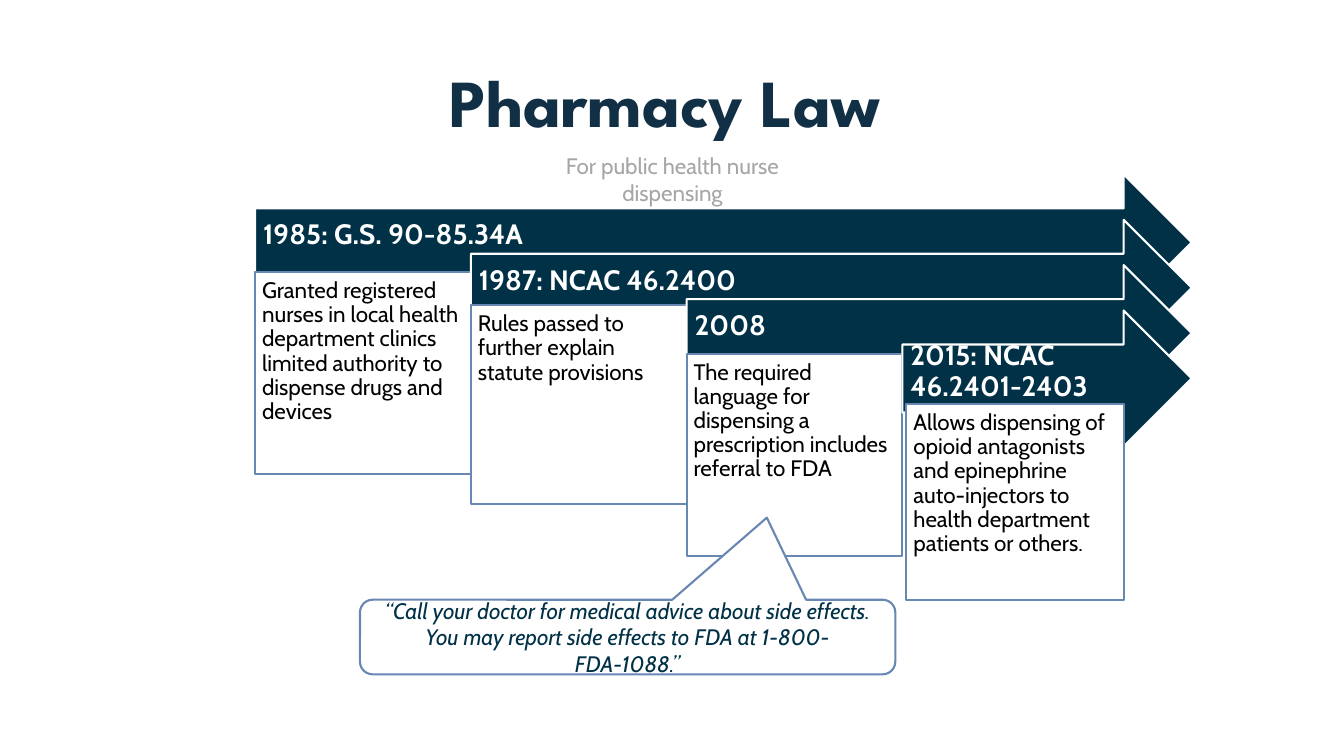
from dataclasses import dataclass

from pptx import Presentation
from pptx.dml.color import RGBColor
from pptx.enum.shapes import MSO_SHAPE
from pptx.enum.text import MSO_ANCHOR, PP_ALIGN
from pptx.shapes.autoshape import Shape
from pptx.slide import Slide
from pptx.util import Inches, Pt


@dataclass(frozen=True)
class Theme:
    navy: RGBColor = RGBColor(0x00, 0x31, 0x47)
    title: RGBColor = RGBColor(0x11, 0x30, 0x45)
    gray: RGBColor = RGBColor(0xA6, 0xA6, 0xA6)
    border: RGBColor = RGBColor(0x68, 0x87, 0xB3)
    white: RGBColor = RGBColor(0xFF, 0xFF, 0xFF)
    black: RGBColor = RGBColor(0x00, 0x00, 0x00)
    title_font: str = "League Spartan"
    body_font: str = "Cabin"
    title_size: int = 48
    law_size: int = 20
    body_size: int = 16
    line_width: float = 1.5


@dataclass(frozen=True)
class Box:
    left: float
    top: float
    width: float
    height: float


@dataclass(frozen=True)
class Law:
    name: str
    summary: str
    detail: Box


THEME = Theme()
FIRST_LEFT, FIRST_TOP = 2.53, 1.73
STEP_X, STEP_Y = 2.14, 0.45
ARROW_RIGHT, ARROW_HEIGHT = 11.82, 1.35

LAWS = [
    Law("1985: G.S. 90-85.34A",
        "Granted registered nurses in local health department clinics limited "
        "authority to dispense drugs and devices",
        Box(2.53, 2.7, 2.14, 2)),
    Law("1987: NCAC 46.2400",
        "Rules passed to further explain statute provisions",
        Box(4.67, 3.03, 2.14, 1.97)),
    Law("2008",
        "The required language for dispensing a prescription includes referral to FDA",
        Box(6.81, 3.51, 2.14, 2.01)),
    Law("2015: NCAC 46.2401-2403",
        "Allows dispensing of opioid antagonists and epinephrine auto-injectors "
        "to health department patients or others.",
        Box(8.99, 4.01, 2.16, 1.94)),
]


def write(sp: Shape, text: str, size: int, color: RGBColor,
          font: str = THEME.body_font, align: PP_ALIGN = PP_ALIGN.CENTER,
          anchor: MSO_ANCHOR = MSO_ANCHOR.TOP, bold: bool = False,
          italic: bool = False, spacing: float = 1.0,
          margins: tuple[float, float, float, float] = (0.1, 0.05, 0.1, 0.05)) -> None:
    """Fill the shape with one paragraph; margins run left, top, right, bottom."""
    tf = sp.text_frame
    tf.word_wrap = True
    tf.vertical_anchor = anchor
    tf.margin_left, tf.margin_top, tf.margin_right, tf.margin_bottom = map(Inches, margins)
    p = tf.paragraphs[0]
    p.text = text
    p.alignment = align
    p.line_spacing = spacing
    p.font.name = font
    p.font.size = Pt(size)
    p.font.bold = bold
    p.font.italic = italic
    p.font.color.rgb = color


def add_box(s: Slide, kind: MSO_SHAPE, box: Box, fill: RGBColor, line: RGBColor) -> Shape:
    sp = s.shapes.add_shape(kind, Inches(box.left), Inches(box.top),
                            Inches(box.width), Inches(box.height))
    sp.shadow.inherit = False
    sp.fill.solid()
    sp.fill.fore_color.rgb = fill
    sp.line.color.rgb = line
    sp.line.width = Pt(THEME.line_width)
    return sp


def add_heading(s: Slide, box: Box, text: str, size: int, color: RGBColor,
                font: str, bold: bool) -> None:
    sp = s.shapes.add_textbox(Inches(box.left), Inches(box.top),
                              Inches(box.width), Inches(box.height))
    write(sp, text, size, color, font=font, bold=bold)


def add_law(s: Slide, index: int, law: Law) -> None:
    left = FIRST_LEFT + index * STEP_X
    top = FIRST_TOP + index * STEP_Y
    arrow = add_box(s, MSO_SHAPE.RIGHT_ARROW,
                    Box(left, top, ARROW_RIGHT - left, ARROW_HEIGHT),
                    THEME.navy, THEME.white)
    write(arrow, law.name, THEME.law_size, THEME.white, align=PP_ALIGN.LEFT,
          anchor=MSO_ANCHOR.MIDDLE, bold=True, spacing=0.9,
          margins=(0.08, 0.08, 0.28, 0.21))
    detail = add_box(s, MSO_SHAPE.RECTANGLE, law.detail, THEME.white, THEME.border)
    write(detail, law.summary, THEME.body_size, THEME.black, align=PP_ALIGN.LEFT,
          spacing=0.9, margins=(0.07, 0.07, 0.07, 0.07))


def add_callout(s: Slide) -> None:
    sp = add_box(s, MSO_SHAPE.ROUNDED_RECTANGULAR_CALLOUT,
                 Box(3.57, 5.95, 5.31, 0.74), THEME.white, THEME.border)
    for i, value in enumerate((0.26, -1.6, 0.17)):
        sp.adjustments[i] = value
    write(sp, "“Call your doctor for medical advice about side effects. "
          "You may report side effects to FDA at 1-800-FDA-1088.”",
          THEME.body_size, THEME.navy, anchor=MSO_ANCHOR.MIDDLE, italic=True)


def main() -> None:
    prs = Presentation()
    prs.slide_width, prs.slide_height = Inches(13.33), Inches(7.5)
    s = prs.slides.add_slide(prs.slide_layouts[6])
    add_heading(s, Box(5.03, 1.46, 3.28, 0.37), "For public health nurse dispensing",
                THEME.body_size, THEME.gray, THEME.body_font, bold=False)
    add_heading(s, Box(4.09, 0.55, 5.01, 0.91), "Pharmacy Law",
                THEME.title_size, THEME.title, THEME.title_font, bold=True)
    for i, law in enumerate(LAWS):
        add_law(s, i, law)
    add_callout(s)
    prs.save("out.pptx")


if __name__ == "__main__":
    main()
